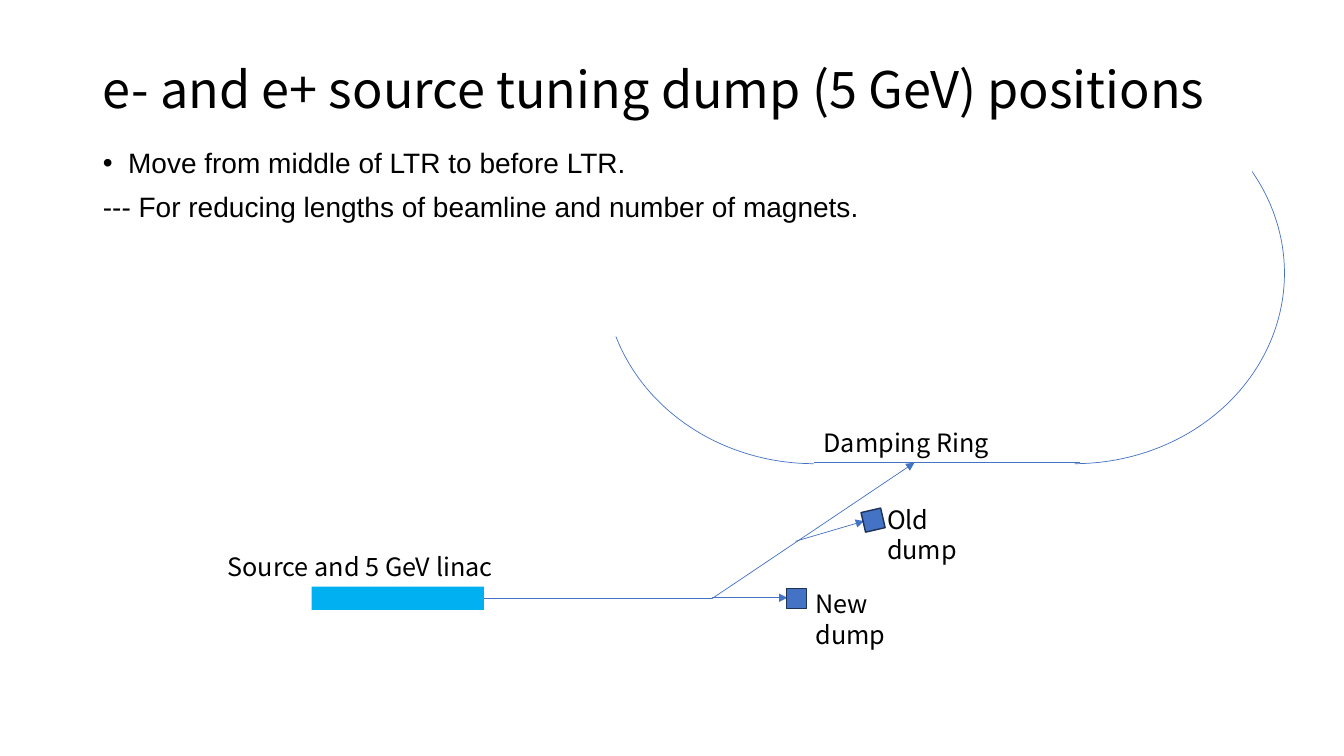
from lxml import etree
from pptx import Presentation
from pptx.dml.color import RGBColor
from pptx.enum.shapes import MSO_CONNECTOR, MSO_SHAPE
from pptx.enum.text import MSO_ANCHOR, MSO_AUTO_SIZE, PP_ALIGN
from pptx.oxml.ns import qn
from pptx.util import Inches, Pt

STRAIGHT = MSO_CONNECTOR.STRAIGHT
ARC, RECTANGLE = MSO_SHAPE.ARC, MSO_SHAPE.RECTANGLE
MIDDLE, TOP = MSO_ANCHOR.MIDDLE, MSO_ANCHOR.TOP
LEFT, JUSTIFY = PP_ALIGN.LEFT, PP_ALIGN.JUSTIFY
NO_AUTOFIT = MSO_AUTO_SIZE.NONE

LABEL_FONT, BODY_FONT = "Noto Sans CJK JP", "Arial"
BLUE, DARK_BLUE, CYAN = "4472C4", "1E3256", "00B0F0"
BLACK, WHITE = "000000", "FFFFFF"

TITLE = "e- and e+ source tuning dump (5 GeV) positions"
POINTS = [
    "Move from middle of LTR to before LTR.",
    "--- For reducing lengths of beamline and number of magnets.",
]
TITLE_AREA = (0.92, 0.4, 11.5, 1.03)
BODY_AREA = (0.92, 1.43, 11.5, 1.91)

# Ring halves: area, mirrored
RING_ARCS = [
    ((8.57, 0.82, 4.17, 3.78), False),
    ((5.99, 0.82, 4.17, 3.78), True),
]
# Beamlines: start, end, arrowhead at end
BEAMLINES = [
    ((8.07, 4.59), (10.71, 4.59), False),
    ((7.06, 5.94), (9.07, 4.59), True),
    ((3.21, 5.94), (7.06, 5.94), False),
    ((7.89, 5.37), (8.57, 5.17), True),
    ((7.06, 5.93), (7.81, 5.93), True),
]
# Blocks: area, rotation, fill, outline
BLOCKS = [
    ((3.09, 5.82, 1.71, 0.23), 0, CYAN, None),
    ((8.56, 5.06, 0.2, 0.2), 347, BLUE, DARK_BLUE),
    ((7.8, 5.84, 0.2, 0.2), 0, BLUE, DARK_BLUE),
]
# Labels: text, area, wraps
LABELS = [
    ("Source and 5 GeV linac", (2.16, 5.42, 2.91, 0.4), False),
    ("Damping Ring", (8.07, 4.19, 1.84, 0.4), False),
    ("Old dump", (8.7, 4.95, 1.33, 0.4), True),
    ("New dump", (7.99, 5.79, 1.46, 0.4), True),
]


def color(value):
    return RGBColor.from_string(value)


def inches(values):
    return [Inches(value) for value in values]


def style_line(shape, value, width):
    shape.line.color.rgb = color(value)
    shape.line.width = Pt(width)


def style_font(font, name, size):
    font.name = name
    font.size = Pt(size)
    font.color.rgb = color(BLACK)


def add_arc(slide, area, mirrored):
    arc = slide.shapes.add_shape(ARC, *inches(area))
    arc.adjustments[0] = 162
    arc.adjustments[1] = 53.913
    arc.shadow.inherit = False
    arc.fill.background()
    style_line(arc, BLUE, 0.5)
    if mirrored:
        arc._element.spPr.find(qn("a:xfrm")).set("flipH", "1")


def add_beamline(slide, start, end, arrow):
    beamline = slide.shapes.add_connector(STRAIGHT, *inches(start + end))
    style_line(beamline, BLUE, 0.5)
    properties = beamline._element.spPr
    if arrow:
        etree.SubElement(properties.find(qn("a:ln")), qn("a:tailEnd"), type="triangle")
    etree.SubElement(properties, qn("a:effectLst"))


def add_block(slide, area, rotation, fill, outline):
    block = slide.shapes.add_shape(RECTANGLE, *inches(area))
    block.rotation = rotation
    block.shadow.inherit = False
    block.fill.solid()
    block.fill.fore_color.rgb = color(fill)
    if outline:
        style_line(block, outline, 1)
    else:
        block.line.fill.background()


def add_label(slide, text, area, wraps):
    frame = slide.shapes.add_textbox(*inches(area)).text_frame
    frame.word_wrap = wraps
    frame.text = text
    style_font(frame.paragraphs[0].font, LABEL_FONT, 18)


def place_in_front(slide, placeholder, area, anchor):
    """Move a white-filled placeholder above the drawing."""
    placeholder.left, placeholder.top, placeholder.width, placeholder.height = inches(area)
    placeholder.fill.solid()
    placeholder.fill.fore_color.rgb = color(WHITE)
    frame = placeholder.text_frame
    frame.auto_size = NO_AUTOFIT
    frame.word_wrap = True
    frame.vertical_anchor = anchor
    slide.shapes._spTree.append(placeholder._element)


def fill_title(slide):
    title = slide.shapes.title
    place_in_front(slide, title, TITLE_AREA, MIDDLE)
    title.text_frame.text = TITLE
    para = title.text_frame.paragraphs[0]
    para.alignment = LEFT
    para.line_spacing = 0.9
    style_font(para.font, LABEL_FONT, 36)


def fill_body(slide):
    body = slide.placeholders[1]
    place_in_front(slide, body, BODY_AREA, TOP)
    frame = body.text_frame
    frame.text = "\n".join(POINTS)
    for index, para in enumerate(frame.paragraphs):
        bulleted = index == 0
        para.alignment = JUSTIFY
        para.line_spacing = 0.9
        para.space_before = Pt(0 if bulleted else 10)
        indent = Inches(0.25 if bulleted else 0)
        properties = para._p.get_or_add_pPr()
        properties.set("marL", str(indent))
        properties.set("indent", str(-indent))
        if bulleted:
            etree.SubElement(properties, qn("a:buChar"), char="•")
        else:
            etree.SubElement(properties, qn("a:buNone"))
        style_font(para.font, BODY_FONT, 20)


def main():
    deck = Presentation()
    deck.slide_width, deck.slide_height = inches((13.33, 7.5))
    slide = deck.slides.add_slide(deck.slide_layouts[1])
    for arc in RING_ARCS:
        add_arc(slide, *arc)
    for beamline in BEAMLINES:
        add_beamline(slide, *beamline)
    for block in BLOCKS:
        add_block(slide, *block)
    for label in LABELS:
        add_label(slide, *label)
    fill_title(slide)
    fill_body(slide)
    deck.save("out.pptx")


if __name__ == "__main__":
    main()
